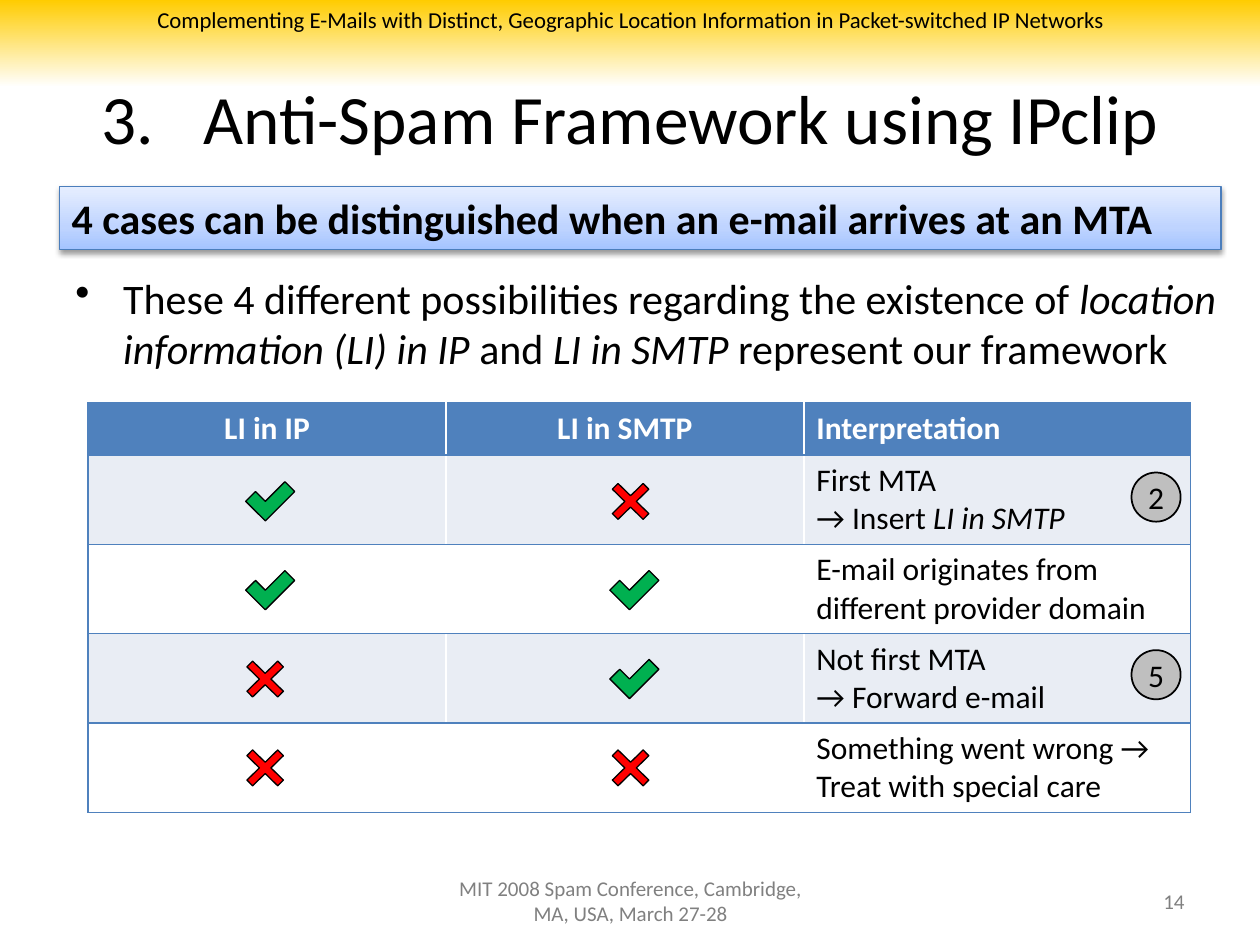
from lxml import etree
from pptx import Presentation
from pptx.dml.color import RGBColor
from pptx.enum.shapes import MSO_SHAPE as Shape
from pptx.enum.text import MSO_ANCHOR as Anchor, PP_ALIGN as Align
from pptx.oxml import parse_xml
from pptx.oxml.ns import nsdecls, qn
from pptx.util import Inches, Pt

BLACK = RGBColor(0x00, 0x00, 0x00)
WHITE = RGBColor(0xFF, 0xFF, 0xFF)
GRAY = RGBColor(0x80, 0x80, 0x80)
BADGE_GRAY = RGBColor(0xBF, 0xBF, 0xBF)
GREEN = RGBColor(0x00, 0xB0, 0x50)
RED = RGBColor(0xFF, 0x00, 0x00)
TABLE_BLUE = RGBColor(0x4F, 0x81, 0xBD)
BAND = RGBColor(0xE9, 0xED, 0xF4)
CLAIM_LINE = RGBColor(0x4B, 0x7E, 0xBC)
HEADER_STOPS = [(0, RGBColor(0xFF, 0xCC, 0x00)), (100, WHITE)]
CLAIM_STOPS = [(0, RGBColor(0xA4, 0xC4, 0xFF)), (35, RGBColor(0xBF, 0xD4, 0xFF)),
               (100, RGBColor(0xE6, 0xEE, 0xFF))]

FONT = "Calibri"
ROW_PITCH = 0.705  # spacing of the marks and badges down the table
# Each case: location information in IP, in SMTP, interpretation lines, badge
CASES = [
    (True, False, [[("First MTA", False)],
                   [("→ Insert ", False), ("LI in SMTP", True)]], "2"),
    (True, True, [[("E-mail originates from different provider domain", False)]], None),
    (False, True, [[("Not first MTA", False)], [("→ Forward e-mail", False)]], "5"),
    (False, False, [[("Something went wrong → Treat with special care", False)]], None),
]


def add_run(paragraph, text, size, color=BLACK, bold=False, italic=False):
    run = paragraph.add_run()
    run.text = text
    font = run.font
    font.name, font.size, font.bold, font.italic = FONT, Pt(size), bold, italic
    font.color.rgb = color


def add_list_mark(paragraph, indent, tag, **attributes):
    """Give the paragraph a hanging indent and a bullet or number."""
    properties = paragraph._p.get_or_add_pPr()
    properties.set("marL", str(Inches(indent)))
    properties.set("indent", str(-Inches(indent)))
    etree.SubElement(properties, qn(tag), **attributes)


def add_text_box(slide, box, align=Align.LEFT, anchor=Anchor.TOP):
    frame = slide.shapes.add_textbox(*map(Inches, box)).text_frame
    frame.word_wrap = True
    frame.vertical_anchor = anchor
    frame.paragraphs[0].alignment = align
    return frame.paragraphs[0]


def add_shape(slide, kind, box, fill=None, line=None, width=0.75):
    shape = slide.shapes.add_shape(kind, *map(Inches, box))
    shape.shadow.inherit = False
    if fill is not None:
        shape.fill.solid()
        shape.fill.fore_color.rgb = fill
    if line is None:
        shape.line.fill.background()
    else:
        shape.line.color.rgb = line
        shape.line.width = Pt(width)
    return shape


def set_gradient(shape, stops, angle):
    stop_xml = "".join(
        f'<a:gs pos="{position * 1000}"><a:srgbClr val="{color}"/></a:gs>'
        for position, color in stops)
    gradient = parse_xml(
        f'<a:gradFill {nsdecls("a")} rotWithShape="1"><a:gsLst>{stop_xml}</a:gsLst>'
        f'<a:lin ang="{angle * 60000}" scaled="0"/></a:gradFill>')
    shape._element.spPr.find(qn("a:prstGeom")).addnext(gradient)


def add_header(slide, box):
    header = add_shape(slide, Shape.RECTANGLE, box)
    set_gradient(header, HEADER_STOPS, 90)
    header.text_frame.vertical_anchor = Anchor.TOP
    paragraph = header.text_frame.paragraphs[0]
    paragraph.alignment = Align.CENTER
    add_run(paragraph, "Complementing E-Mails with Distinct, Geographic Location "
                       "Information in Packet-switched IP Networks", 13)


def add_title(slide, box):
    title = slide.shapes.title
    title.left, title.top, title.width, title.height = map(Inches, box)
    title.text_frame.vertical_anchor = Anchor.MIDDLE
    paragraph = title.text_frame.paragraphs[0]
    paragraph.alignment = Align.CENTER
    add_list_mark(paragraph, 0.81, "a:buAutoNum", type="arabicPeriod", startAt="3")
    add_run(paragraph, "Anti-Spam Framework using IPclip", 39.6)


def add_claim(slide, box):
    claim = add_shape(slide, Shape.RECTANGLE, box, line=CLAIM_LINE)
    set_gradient(claim, CLAIM_STOPS, 270)
    claim._element.spPr.find(qn("a:effectLst")).append(parse_xml(
        f'<a:outerShdw {nsdecls("a")} blurRad="{Pt(3.1)}" dist="{Pt(1.6)}" '
        'dir="5400000" rotWithShape="0"><a:srgbClr val="000000">'
        '<a:alpha val="38000"/></a:srgbClr></a:outerShdw>'))
    claim.text_frame.vertical_anchor = Anchor.TOP
    paragraph = claim.text_frame.paragraphs[0]
    paragraph.alignment = Align.LEFT
    add_run(paragraph, "4 cases can be distinguished when an e-mail arrives at an MTA",
            24, bold=True)


def add_body(slide, box):
    paragraph = add_text_box(slide, box)
    add_list_mark(paragraph, 0.38, "a:buChar", char="•")
    for text, italic in [
            ("These 4 different possibilities regarding the existence of ", False),
            ("location information (LI) in IP ", True), ("and ", False),
            ("LI in SMTP ", True), ("represent our framework", False)]:
        add_run(paragraph, text, 24, italic=italic)


def set_cell(cell, fill, sides):
    """Fill the cell and draw its borders on the given sides (L, R, T, B order)."""
    properties = cell._tc.get_or_add_tcPr()
    for side in sides:
        properties.append(parse_xml(
            f'<a:ln{side} {nsdecls("a")} w="{Pt(1)}"><a:solidFill>'
            f'<a:srgbClr val="{TABLE_BLUE}"/></a:solidFill></a:ln{side}>'))
    cell.fill.solid()
    cell.fill.fore_color.rgb = fill


def add_case_table(slide, box):
    table = slide.shapes.add_table(len(CASES) + 1, 3, *map(Inches, box)).table
    for column, width in zip(table.columns, (2.84, 2.84, 3.07)):
        column.width = Inches(width)
    for index, row in enumerate(table.rows):
        row.height = Inches(0.71 if index else 0.41)
        fill = (BAND if index % 2 else WHITE) if index else TABLE_BLUE
        for cell, sides in zip(row.cells, ("LTB", "TB", "RTB")):
            set_cell(cell, fill, sides)
    headings = [("LI in IP", Align.CENTER), ("LI in SMTP", Align.CENTER),
                ("Interpretation", Align.LEFT)]
    for cell, (text, align) in zip(table.rows[0].cells, headings):
        paragraph = cell.text_frame.paragraphs[0]
        paragraph.alignment = align
        add_run(paragraph, text, 18, WHITE, bold=True)
    for index, (_, _, lines, _) in enumerate(CASES, start=1):
        frame = table.cell(index, 2).text_frame
        for number, runs in enumerate(lines):
            paragraph = frame.add_paragraph() if number else frame.paragraphs[0]
            for text, italic in runs:
                add_run(paragraph, text, 18, italic=italic)


def add_mark(slide, present, column, top):
    if present:
        box = (1.98 + 2.89 * column, top + 0.08, 0.33, 0.22)
        check = add_shape(slide, Shape.RECTANGLE, box, GREEN, BLACK)
        # The L-shaped preset has no member in MSO_SHAPE
        check._element.spPr.find(qn("a:prstGeom")).set("prst", "corner")
        check.rotation = 315
    else:
        box = (1.87 + 2.9 * column, top, 0.47, 0.46)
        cross = add_shape(slide, Shape.MATH_MULTIPLY, box, RED, BLACK)
        cross.adjustments[0] = 0.14


def add_badge(slide, text, box):
    badge = add_shape(slide, Shape.OVAL, box, BADGE_GRAY, BLACK, 1)
    frame = badge.text_frame
    frame.margin_left = frame.margin_right = frame.margin_top = frame.margin_bottom = 0
    frame.vertical_anchor = Anchor.MIDDLE
    frame.paragraphs[0].alignment = Align.CENTER
    add_run(frame.paragraphs[0], text, 18)


def add_footer(slide, text, box, align):
    add_run(add_text_box(slide, box, align, Anchor.MIDDLE), text, 12, GRAY)


def main():
    presentation = Presentation()
    presentation.slide_width, presentation.slide_height = Inches(10), Inches(7.5)
    slide = presentation.slides.add_slide(presentation.slide_layouts[5])
    add_header(slide, (0, 0, 10, 0.69))
    add_title(slide, (0.5, 0.3, 9, 1.25))
    add_body(slide, (0.5, 2.11, 9.27, 1.64))
    add_footer(slide, "MIT 2008 Spam Conference, Cambridge, MA, USA, March 27-28",
               (3.42, 6.95, 3.17, 0.4), Align.CENTER)
    add_footer(slide, "14", (7.17, 6.95, 2.33, 0.4), Align.RIGHT)
    add_case_table(slide, (0.7, 3.2, 8.75, 3.25))
    for row, (in_ip, in_smtp, _, badge) in enumerate(CASES):
        top = 3.75 + ROW_PITCH * row
        add_mark(slide, in_ip, 0, top)
        add_mark(slide, in_smtp, 1, top)
        if badge:
            add_badge(slide, badge, (8.98, top, 0.39, 0.39))
    add_claim(slide, (0.47, 1.48, 9.22, 0.5))
    presentation.save("out.pptx")


if __name__ == "__main__":
    main()
